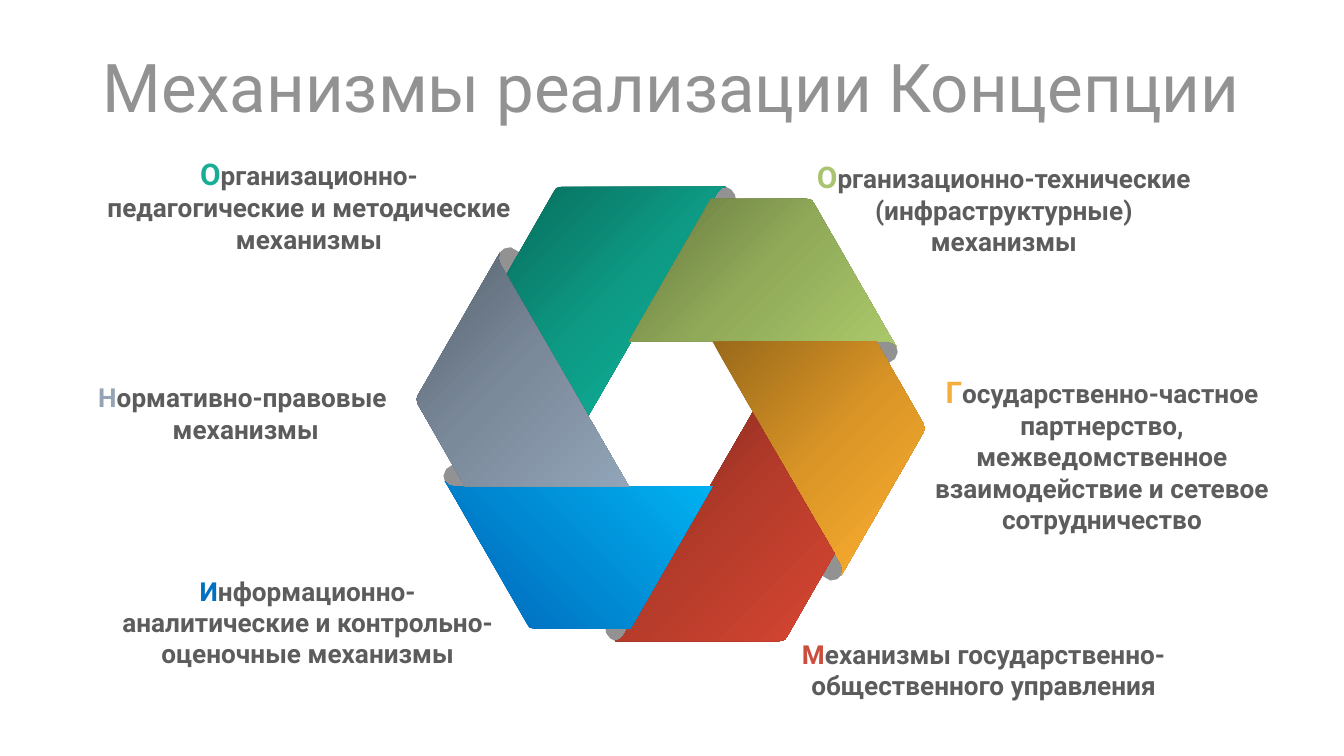
"""Build a slide with a six-band folded hexagon and a caption for each band."""
from copy import deepcopy

from pptx import Presentation
from pptx import util as u
from pptx.dml.color import RGBColor
from pptx.enum import text
from pptx.oxml.ns import qn

GRAY, DARK = "929292", "5C5C5C"


def paint(fill, tone):
    fill.solid()
    fill.fore_color.rgb = RGBColor.from_string(tone)


def draw(dots):
    spots = [(u.Inches(x), u.Inches(y)) for x, y in dots]
    form = slide.shapes.build_freeform(*spots[0])
    form.add_line_segments(spots[1:], close=True)
    shape = form.convert_to_shape()
    shape.shadow.inherit = False
    shape.line.fill.background()
    return shape


deck = Presentation()
deck.slide_width = u.Inches(10)
deck.slide_height = u.Inches(10 * 9 / 16)
slide = deck.slides.add_slide(deck.slide_layouts[6])

caps = [
    [(5.4, 1.39), (5.44, 1.41), (5.47, 1.45), (5.48, 1.52), (5.25, 1.52),
     (5.27, 1.46), (5.32, 1.42)],
    [(6.67, 2.58), (6.68, 2.62), (6.66, 2.67), (6.6, 2.71), (6.48, 2.51),
     (6.54, 2.5), (6.6, 2.51), (6.64, 2.54)],
    [(6.26, 4.28), (6.23, 4.31), (6.18, 4.32), (6.11, 4.28), (6.22, 4.08),
     (6.27, 4.13), (6.28, 4.19), (6.28, 4.24)],
]
bands = [
    [(5.4, 1.39), (4.18, 1.39), (4.14, 1.4), (4.12, 1.43), (3.77, 2.04),
     (4.38, 3.09), (5.34, 1.43), (5.37, 1.4)],
    [(6.67, 2.58), (6.64, 2.53), (6.06, 1.52), (6.04, 1.49), (6, 1.48),
     (5.29, 1.48), (4.68, 2.54), (6.6, 2.54), (6.64, 2.55)],
    [(6.26, 4.28), (6.29, 4.23), (6.87, 3.22), (6.88, 3.19), (6.87, 3.15),
     (6.52, 2.54), (5.3, 2.54), (6.26, 4.2), (6.27, 4.24)],
]
for group in (caps, bands):
    group += [[(9.98 - x, 6.16 - y) for x, y in dots] for dots in group]

warm = (0, 50, 100)
looks = [
    (warm, ("096D5D", "0D9B85", "0FB89E"), 315),
    (warm, ("66773F", "90AA59", "ABC96A"), 315),
    (warm, ("99691B", "DA9526", "FFB031"), 315),
    (warm, ("7F291E", "B53B2A", "D74632"), 315),
    ((0, 14, 97), ("0070C0", "0070C0", "00B0F0"), 45),
    (warm, ("56616D", "7B8A9B", "92A4B7"), 315),
]

for dots in caps:
    paint(draw(dots).fill, GRAY)

for dots, (marks, tones, angle) in zip(bands, looks):
    band = draw(dots)
    band.fill.gradient()
    band.fill.gradient_angle = angle
    stops = next(band._element.spPr.iter(qn("a:gsLst")))
    stops.append(deepcopy(stops[0]))
    for stop, mark, tone in zip(band.fill.gradient_stops, marks, tones):
        stop.position = mark / 100
        stop.color.rgb = RGBColor.from_string(tone)

labels = [
    ((0.42, 0.37, 9.15, 0.54),
     [[("Механизмы реализации Концепции", 36, GRAY, False)]]),
    ((5.82, 4.7, 3, 0.57),
     [[("М", 14, "CC4E3D", True),
       ("еханизмы государственно-общественного управления", 14, DARK, True)]]),
    ((0.72, 4.23, 3.14, 0.81),
     [[("И", 14, "0070C0", True),
       ("нформационно-аналитические и контрольно-оценочные механизмы",
        14, DARK, True)]]),
    ((0.67, 1.11, 3.26, 0.84),
     [[("О", 16, "1AAD96", True),
       ("рганизационно-педагогические и методические механизмы",
        14, DARK, True)]]),
    ((5.89, 1.13, 3.16, 0.84),
     [[("О", 16, "A9C370", True),
       ("рганизационно-технические (инфраструктурные) механизмы",
        14, DARK, True)]]),
    ((6.55, 2.73, 3.3, 1.31),
     [[("Г", 16, "F5AE3B", True),
       ("осударственно-частное партнерство, межведомственное "
        "взаимодействие и сетевое сотрудничество", 14, DARK, True)]]),
    ((0.46, 2.79, 2.69, 0.57),
     [[("Н", 14, "94A4B5", True), ("ормативно-правовые", 14, DARK, True)],
      [(" механизмы", 14, DARK, True)]]),
]

for place, lines in labels:
    box = slide.shapes.add_textbox(*map(u.Inches, place))
    frame = box.text_frame
    frame.word_wrap = True
    if place == labels[0][0]:
        frame.vertical_anchor = text.MSO_ANCHOR.MIDDLE
        frame.margin_left = frame.margin_right = u.Inches(0)
        frame.margin_top = frame.margin_bottom = u.Inches(0)
    for i, line in enumerate(lines):
        para = frame.add_paragraph() if i else frame.paragraphs[0]
        para.alignment = text.PP_ALIGN.CENTER
        for words, size, tone, bold in line:
            run = para.add_run()
            run.text = words
            run.font.name = "Roboto"
            run.font.size = u.Pt(size)
            run.font.bold = bold
            paint(run.font.fill, tone)

deck.save("out.pptx")
